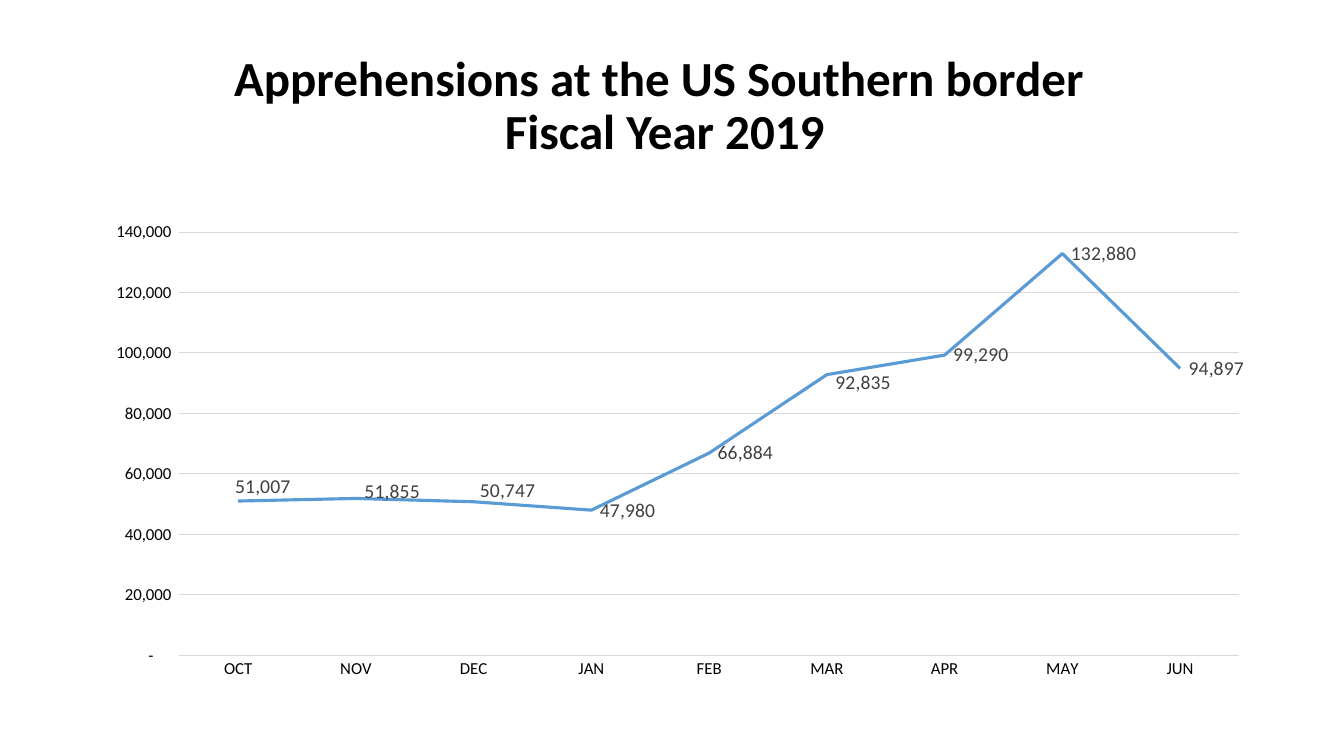
from dataclasses import dataclass

import pptx
import pptx.chart.data
import pptx.dml.color
import pptx.enum.chart
import pptx.enum.text
import pptx.oxml
import pptx.oxml.ns
import pptx.util


@dataclass(frozen=True)
class Theme:
    font: str = "Calibri"
    text: str = "000000"
    label: str = "404040"
    rule: str = "D9D9D9"
    accent: str = "5B9BD5"
    title_pt: float = 35
    axis_pt: float = 12
    label_pt: float = 14
    base_pt: float = 10
    rule_pt: float = 0.75
    series_pt: float = 2.25


NUMBER_FORMAT = '_(* #,##0_);_(* \\(#,##0\\);_(* "-"??_);_(@_)'
APPREHENSIONS = {
    "OCT": 51007, "NOV": 51855, "DEC": 50747,
    "JAN": 47980, "FEB": 66884, "MAR": 92835,
    "APR": 99290, "MAY": 132880, "JUN": 94897,
}
LABEL_SHIFTS = {"OCT": (-1, -3), "NOV": (0, -1.5), "DEC": (-0.2, -2.4), "MAR": (0, 1.6)}
PLOT_AREA = (6.6, 3.2, 91.4, 88.2)


def rgb(color):
    return pptx.dml.color.RGBColor.from_string(color)


def style_font(font, name, size, color, bold=False):
    font.name = name
    font.size = pptx.util.Pt(size)
    font.bold = bold
    font.color.rgb = rgb(color)


def add_text(p, text, align=None, spacing=None, **font_format):
    p.alignment = align
    p.line_spacing = spacing
    for i, line in enumerate(text.split("\n")):
        if i:
            p.add_line_break()
        r = p.add_run()
        r.text = line
        style_font(r.font, **font_format)


def manual_layout(percents, inner=False):
    ns = pptx.oxml.ns.nsdecls("c")
    parts = '<c:layoutTarget val="inner"/><c:xMode val="edge"/><c:yMode val="edge"/>' if inner else ""
    for tag, percent in zip("xywh", percents):
        parts += f'<c:{tag} val="{percent / 100:.3f}"/>'
    return pptx.oxml.parse_xml(f"<c:layout {ns}><c:manualLayout>{parts}</c:manualLayout></c:layout>")


class SlideBuilder:
    COLUMNS = 100
    ROWS = 100

    def __init__(self, prs, theme):
        self.theme = theme
        self.cell = (prs.slide_width / self.COLUMNS, prs.slide_height / self.ROWS)
        self.slide = prs.slides.add_slide(prs.slide_layouts.get_by_name("Title Only"))

    def box(self, col, row, cols, rows):
        w, h = self.cell
        return [round(n) for n in (col * w, row * h, cols * w, rows * h)]

    def title(self, text, *area):
        t = self.theme
        sp = self.slide.shapes.title
        sp.left, sp.top, sp.width, sp.height = self.box(*area)
        tf = sp.text_frame
        tf.word_wrap = True
        tf.auto_size = pptx.enum.text.MSO_AUTO_SIZE.NONE
        tf.vertical_anchor = pptx.enum.text.MSO_ANCHOR.MIDDLE
        add_text(tf.paragraphs[0], text, align=pptx.enum.text.PP_ALIGN.CENTER, spacing=0.9,
                 name=t.font, size=t.title_pt, color=t.text, bold=True)

    def rule(self, line):
        line.color.rgb = rgb(self.theme.rule)
        line.width = pptx.util.Pt(self.theme.rule_pt)

    def axis(self, axis):
        t = self.theme
        axis.major_tick_mark = axis.minor_tick_mark = pptx.enum.chart.XL_TICK_MARK.NONE
        style_font(axis.tick_labels.font, t.font, t.axis_pt, t.text)

    def labels(self, series, categories, shifts):
        t = self.theme
        right = pptx.enum.chart.XL_LABEL_POSITION.RIGHT
        labels = series.data_labels
        labels.show_value = True
        labels.number_format = NUMBER_FORMAT
        labels.number_format_is_linked = False
        labels.position = right
        style_font(labels.font, t.font, t.label_pt, t.label)
        for category, shift in shifts.items():
            index = categories.index(category)
            label = series.points[index].data_label
            style_font(label.font, t.font, t.label_pt, t.label)
            label.position = right
            idx = labels._element.xpath(f"c:dLbl/c:idx[@val='{index}']")[0]
            idx.addnext(manual_layout(shift))

    def line_chart(self, values, shifts, *area):
        t = self.theme
        data = pptx.chart.data.CategoryChartData(number_format=NUMBER_FORMAT)
        data.categories = list(values)
        data.add_series("Series 1", list(values.values()))
        chart = self.slide.shapes.add_chart(
            pptx.enum.chart.XL_CHART_TYPE.LINE, *self.box(*area), data).chart
        chart.has_title = False
        chart.has_legend = False
        style_font(chart.font, t.font, t.base_pt, t.text)

        plot_area = chart._chartSpace.chart.plotArea
        for layout in plot_area.xpath("c:layout"):
            plot_area.remove(layout)
        plot_area.insert(0, manual_layout(PLOT_AREA, inner=True))

        self.axis(chart.category_axis)
        self.rule(chart.category_axis.format.line)
        value_axis = chart.value_axis
        self.axis(value_axis)
        value_axis.format.line.fill.background()
        value_axis.minimum_scale = 0
        value_axis.maximum_scale = 140000
        value_axis.major_unit = 20000
        value_axis.has_major_gridlines = True
        self.rule(value_axis.major_gridlines.format.line)
        value_axis.tick_labels.number_format = NUMBER_FORMAT
        value_axis.tick_labels.number_format_is_linked = False

        plot = chart.plots[0]
        plot.vary_by_categories = False
        series = plot.series[0]
        series.smooth = False
        series.marker.style = pptx.enum.chart.XL_MARKER_STYLE.NONE
        series.format.line.color.rgb = rgb(t.accent)
        series.format.line.width = pptx.util.Pt(t.series_pt)
        self.labels(series, list(values), shifts)


def main():
    prs = pptx.Presentation()
    prs.slide_width = pptx.util.Inches(13.33)
    prs.slide_height = pptx.util.Inches(7.5)
    s = SlideBuilder(prs, Theme())
    s.title("Apprehensions at the US Southern border\n Fiscal Year 2019", 5.93, 4.53, 86.27, 19.33)
    s.line_chart(APPREHENSIONS, LABEL_SHIFTS, 7.65, 28.67, 86.27, 63.47)
    prs.save("out.pptx")


if __name__ == "__main__":
    main()
